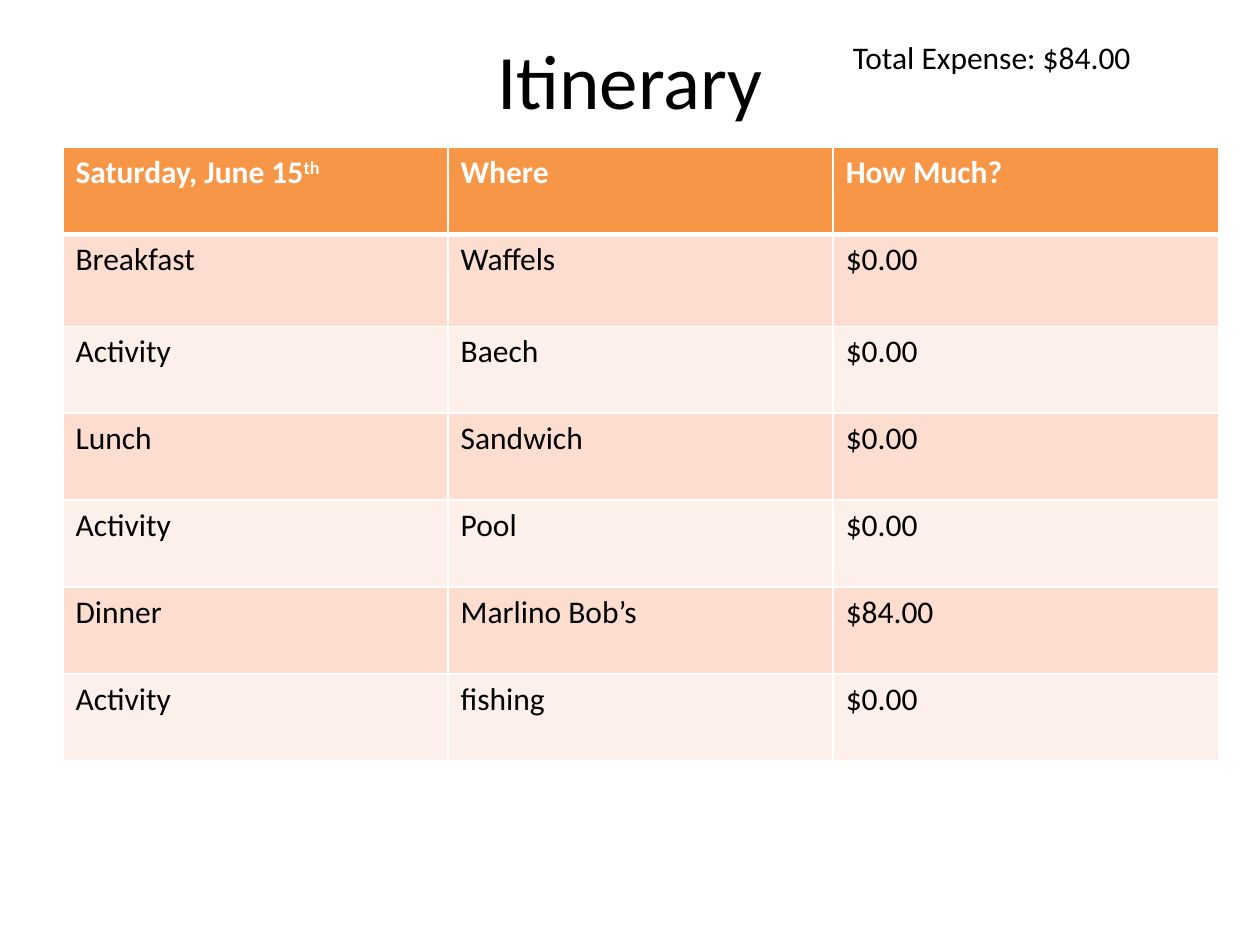
from lxml import etree
from pptx import Presentation
from pptx.dml.color import RGBColor
from pptx.enum.text import MSO_ANCHOR, MSO_AUTO_SIZE, PP_ALIGN
from pptx.oxml.ns import qn
from pptx.util import Inches, Pt

MIDDLE = MSO_ANCHOR.MIDDLE
CENTER = PP_ALIGN.CENTER
GROW = MSO_AUTO_SIZE.SHAPE_TO_FIT_TEXT
TITLE_ONLY = 5

FONT = "Calibri"
BLACK, WHITE = "000000", "FFFFFF"
HEADER_FILL = "F79646"
BAND_FILLS = ("FCDDCF", "FDEFE9")
SIDES = ("L", "R", "T", "B")

HEADINGS = ("Saturday, June 15", "Where", "How Much?")
PLANS = (
    ("Breakfast", "Waffels", "$0.00"),
    ("Activity", "Baech", "$0.00"),
    ("Lunch", "Sandwich", "$0.00"),
    ("Activity", "Pool", "$0.00"),
    ("Dinner", "Marlino Bob’s", "$84.00"),
    ("Activity", "fishing", "$0.00"),
)
TABLE_WIDTH = 9.17
ROW_HEIGHT, BREAKFAST_HEIGHT = 0.69, 0.73


def color(value):
    return RGBColor.from_string(value)


def add_run(paragraph, text, size=18, ink=BLACK, bold=False):
    run = paragraph.add_run()
    run.text = text
    run.font.name = FONT
    run.font.size = Pt(size)
    run.font.bold = bold
    run.font.color.rgb = color(ink)
    return run


def add_superscript(paragraph, text, ink):
    run = add_run(paragraph, text, ink=ink, bold=True)
    run._r.get_or_add_rPr().set("baseline", "30000")


def set_borders(cell, widths):
    properties = cell._tc.get_or_add_tcPr()
    for position, (side, width) in enumerate(zip(SIDES, widths)):
        line = etree.Element(qn(f"a:ln{side}"), w=str(Pt(width)))
        fill = etree.SubElement(line, qn("a:solidFill"))
        etree.SubElement(fill, qn("a:srgbClr"), val=WHITE)
        properties.insert(position, line)


def fill_cell(cell, text, fill, ink, bold, widths):
    cell.fill.solid()
    cell.fill.fore_color.rgb = color(fill)
    set_borders(cell, widths)
    add_run(cell.text_frame.paragraphs[0], text, ink=ink, bold=bold)


def add_title(slide, text):
    title = slide.shapes.title
    title.left, title.top = Inches(0.5), 0
    title.width, title.height = Inches(9), Inches(1.25)
    title.text_frame.vertical_anchor = MIDDLE
    heading = title.text_frame.paragraphs[0]
    heading.alignment = CENTER
    add_run(heading, text, size=44)


def add_total(slide, text):
    total = slide.shapes.add_textbox(
        Inches(6.67), Inches(0.25), Inches(3.08), Inches(0.4))
    total.text_frame.word_wrap = True
    total.text_frame.auto_size = GROW
    add_run(total.text_frame.paragraphs[0], text)


def add_itinerary(slide):
    heights = [ROW_HEIGHT, BREAKFAST_HEIGHT] + [ROW_HEIGHT] * (len(PLANS) - 1)
    itinerary = slide.shapes.add_table(
        len(heights), len(HEADINGS), Inches(0.5), Inches(1.17),
        Inches(TABLE_WIDTH), Inches(sum(heights))).table
    for column in itinerary.columns:
        column.width = Inches(TABLE_WIDTH / len(HEADINGS))
    for row, height in zip(itinerary.rows, heights):
        row.height = Inches(height)

    for cell, heading in zip(itinerary.rows[0].cells, HEADINGS):
        fill_cell(cell, heading, HEADER_FILL, WHITE, True, (1, 1, 1, 3))
    date = itinerary.cell(0, 0).text_frame.paragraphs[0]
    add_superscript(date, "th", WHITE)

    for index, plan in enumerate(PLANS):
        widths = (1, 1, 1 if index else 3, 1)
        for cell, text in zip(itinerary.rows[index + 1].cells, plan):
            fill_cell(cell, text, BAND_FILLS[index % 2], BLACK, False, widths)


def main():
    deck = Presentation()
    deck.slide_width, deck.slide_height = Inches(10), Inches(7.5)
    slide = deck.slides.add_slide(deck.slide_layouts[TITLE_ONLY])
    add_title(slide, "Itinerary")
    add_total(slide, "Total Expense: $84.00")
    add_itinerary(slide)
    deck.save("out.pptx")


if __name__ == "__main__":
    main()
